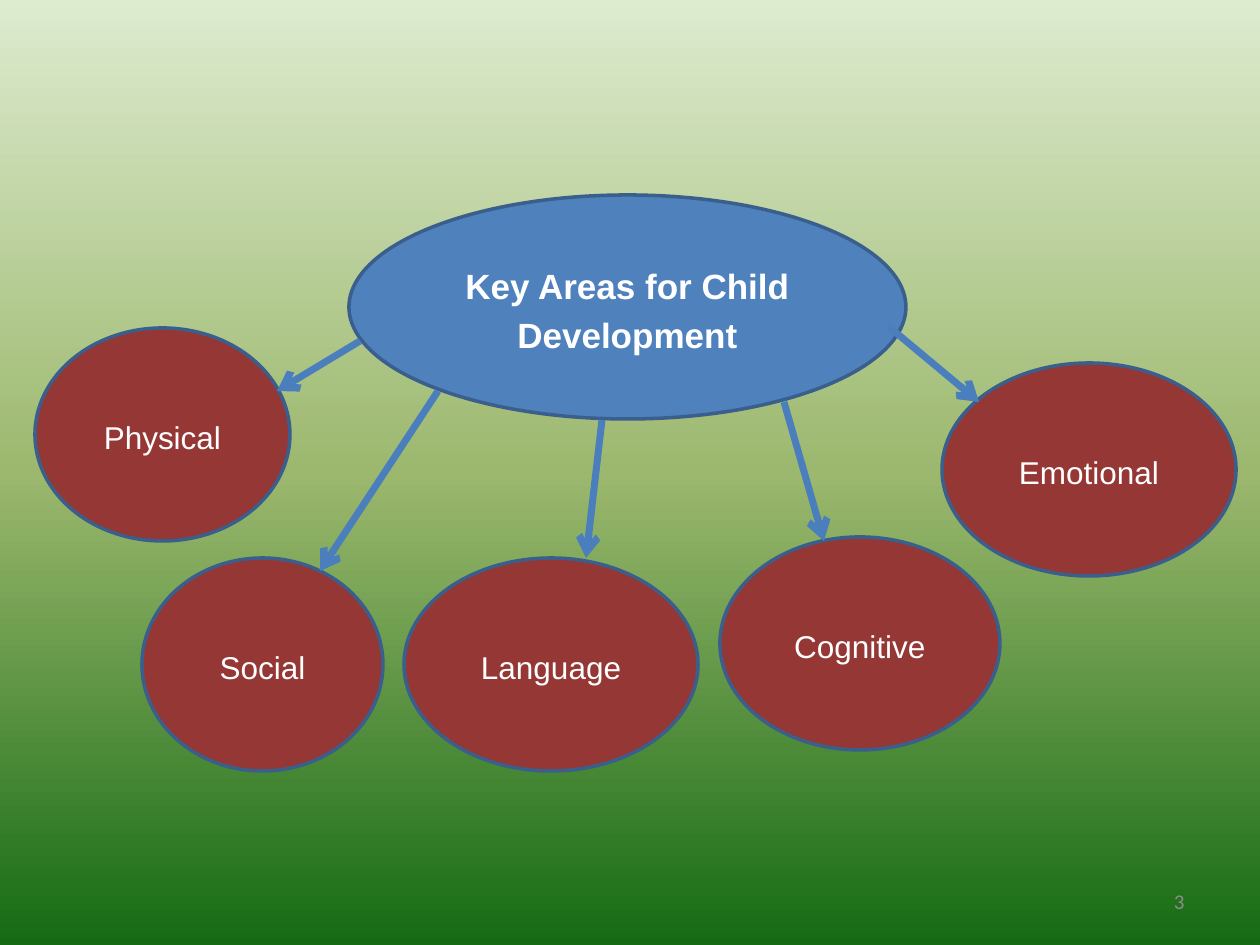
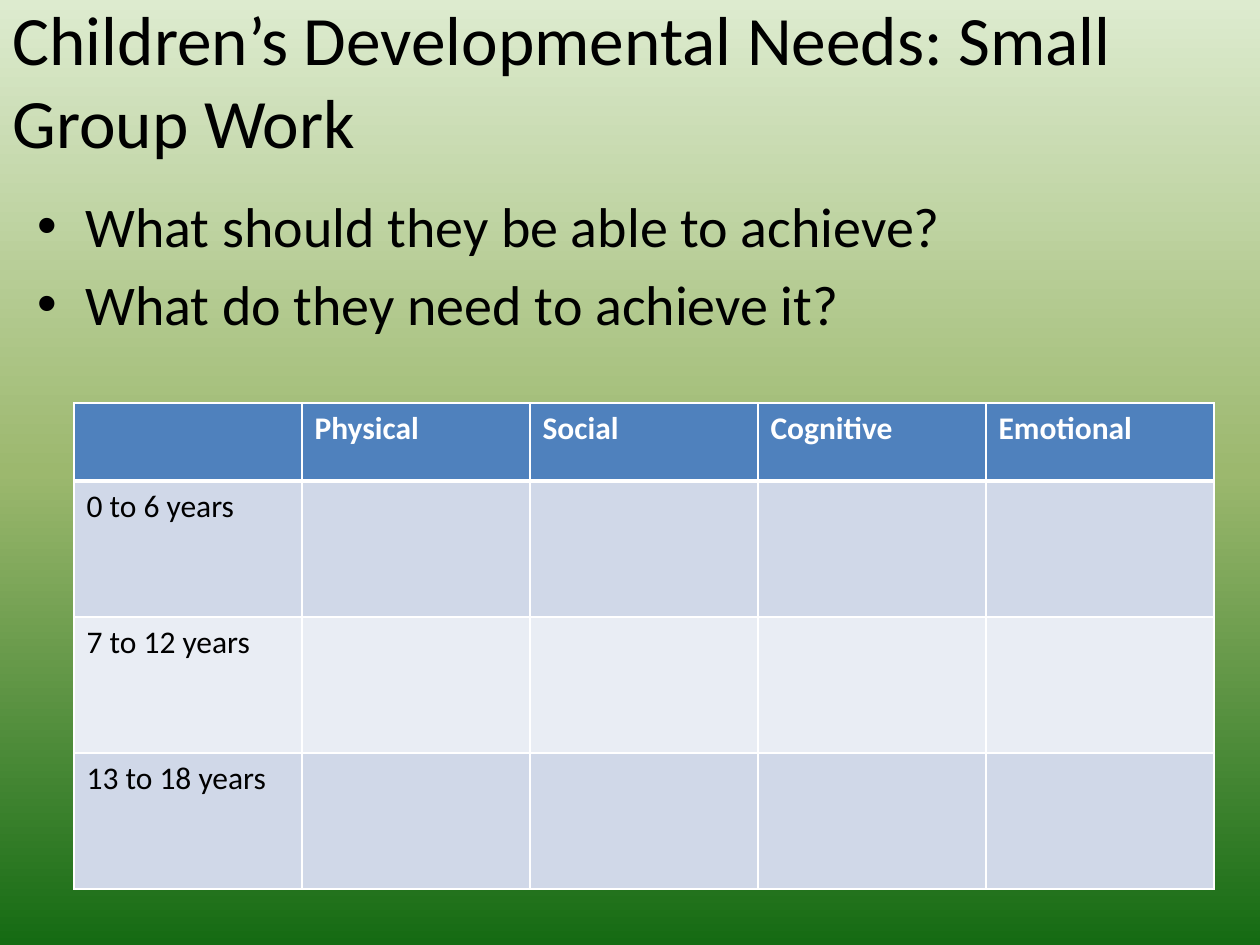
from copy import deepcopy

from lxml.etree import SubElement
from pptx import Presentation
from pptx.dml.color import RGBColor as RGB
from pptx.enum.shapes import MSO_CONNECTOR as LINK, MSO_SHAPE as SHAPE
from pptx.enum.text import MSO_ANCHOR as ANCHOR, MSO_AUTO_SIZE as FIT, PP_ALIGN as ALIGN
from pptx.oxml.ns import qn
from pptx.util import Emu, Pt

# Shared colours
BLACK = RGB(0x00, 0x00, 0x00)
WHITE = RGB(0xFF, 0xFF, 0xFF)
GREY = RGB(0x8C, 0x8C, 0x8C)
BLUE = RGB(0x4F, 0x81, 0xBD)
OUTLINE = RGB(0x3A, 0x5F, 0x8C)
ARROW = RGB(0x4B, 0x7E, 0xBC)
RED = RGB(0x95, 0x37, 0x35)
BAND_DARK = RGB(0xD0, 0xD8, 0xE8)
BAND_LIGHT = RGB(0xE9, 0xED, 0xF4)
BACKDROP = [(0, RGB(0xDD, 0xEB, 0xCF)), (0.5, RGB(0x9C, 0xB8, 0x6E)), (1, RGB(0x15, 0x6B, 0x13))]


def px(*lengths):
    return [Emu(round(n * 914400 / 126)) for n in lengths]


def write(frame, *lines, size=18, font="Calibri", color=BLACK, bold=False,
          align=ALIGN.LEFT, anchor=ANCHOR.TOP, spacing=None, before=None, after=None):
    frame.word_wrap = True
    frame.vertical_anchor = anchor
    for i, line in enumerate(lines):
        para = frame.add_paragraph() if i else frame.paragraphs[0]
        para.alignment, para.line_spacing = align, spacing
        para.space_before, para.space_after = before, after
        run = para.add_run()
        run.text = line
        run.font.name, run.font.size, run.font.bold = font, Pt(size), bold
        run.font.color.rgb = color


prs = Presentation()
prs.slide_width, prs.slide_height = px(1260, 945)

# Gradient behind every slide
backdrop = prs.slide_master.background.fill
backdrop.gradient()
backdrop.gradient_angle = 270
stop_list = prs.slide_master.element.find(".//" + qn("a:gsLst"))
stop_list.append(deepcopy(stop_list[-1]))
for stop, (position, color) in zip(backdrop.gradient_stops, BACKDROP):
    stop.position, stop.color.rgb = position, color

# Slide 1: key areas
areas_slide = prs.slides.add_slide(prs.slide_layouts[6])
page_number = areas_slide.shapes.add_textbox(*px(903, 876, 294, 50))
write(page_number.text_frame, "3", size=12, color=GREY, align=ALIGN.RIGHT, anchor=ANCHOR.MIDDLE)

bubbles = [
    ("Key Areas for Child Development", (349, 195, 557, 224), BLUE, 20, True),
    ("Social", (142, 558, 241, 213), RED, 18, False),
    ("Language", (404, 558, 294, 213), RED, 18, False),
    ("Cognitive", (720, 537, 280, 213), RED, 18, False),
    ("Physical", (35, 328, 255, 213), RED, 18, False),
    ("Emotional", (942, 363, 294, 213), RED, 18, False),
]
for label, box, fill, size, bold in bubbles:
    bubble = areas_slide.shapes.add_shape(SHAPE.OVAL, *px(*box))
    bubble.shadow.inherit = False
    bubble.fill.solid()
    bubble.fill.fore_color.rgb = fill
    bubble.line.color.rgb = OUTLINE
    bubble.line.width = Pt(2)
    write(bubble.text_frame, label, size=size, font="Arial", color=WHITE, bold=bold,
          align=ALIGN.CENTER, anchor=ANCHOR.MIDDLE, spacing=1.15, after=Pt(10))

# Arrows from the centre bubble to each area
for ends in [(360, 341, 277, 391), (438, 391, 320, 571), (602, 420, 586, 558),
             (784, 402, 824, 541), (888, 326, 979, 402)]:
    arrow = areas_slide.shapes.add_connector(LINK.STRAIGHT, *px(*ends))
    arrow.line.color.rgb = ARROW
    arrow.line.width = Pt(4)
    SubElement(arrow.line._get_or_add_ln(), qn("a:tailEnd"), type="arrow")
    SubElement(arrow._element.spPr, qn("a:effectLst"))

# Slide 2: group work
work_slide = prs.slides.add_slide(prs.slide_layouts[5])
title = work_slide.shapes.title
title.left, title.top, title.width, title.height = px(0, 0, 1260, 158)
title.text_frame.auto_size = FIT.NONE
write(title.text_frame, "Children’s Developmental Needs: Small Group Work",
      size=39.6, anchor=ANCHOR.MIDDLE)

# Questions
questions = work_slide.shapes.add_textbox(*px(25, 185, 1221, 724)).text_frame
write(questions, "What should they be able to achieve?", "What do they need to achieve it?",
      size=32, before=Pt(6.4))
for question in questions.paragraphs:
    props = question._p.get_or_add_pPr()
    indent = px(48)[0]
    props.set("marL", str(indent))
    props.set("indent", str(-indent))
    SubElement(props, qn("a:buFont"), typeface="Arial")
    SubElement(props, qn("a:buChar"), char="•")

# Needs by age
needs = [
    ["", "Physical", "Social", "Cognitive", "Emotional"],
    ["0 to 6 years"],
    ["7 to 12 years"],
    ["13 to 18 years"],
]
row_fills = [BLUE, BAND_DARK, BAND_LIGHT, BAND_DARK]
grid = work_slide.shapes.add_table(4, 5, *px(74, 403, 1140, 486)).table
for column in grid.columns:
    column.width = px(228)[0]
for r, (row, labels) in enumerate(zip(grid.rows, needs)):
    row.height = px(136 if r else 78)[0]
    for c, cell in enumerate(row.cells):
        borders = cell._tc.get_or_add_tcPr()
        for side in "LRTB":
            heavy = (r, side) in [(0, "B"), (1, "T")]
            edge = SubElement(borders, qn("a:ln" + side), w=str(Pt(3 if heavy else 1)))
            paint = SubElement(edge, qn("a:solidFill"))
            SubElement(paint, qn("a:srgbClr"), val=str(WHITE))
        cell.fill.solid()
        cell.fill.fore_color.rgb = row_fills[r]
        if c < len(labels) and labels[c]:
            write(cell.text_frame, labels[c], color=BLACK if r else WHITE, bold=r == 0)

prs.save("out.pptx")
